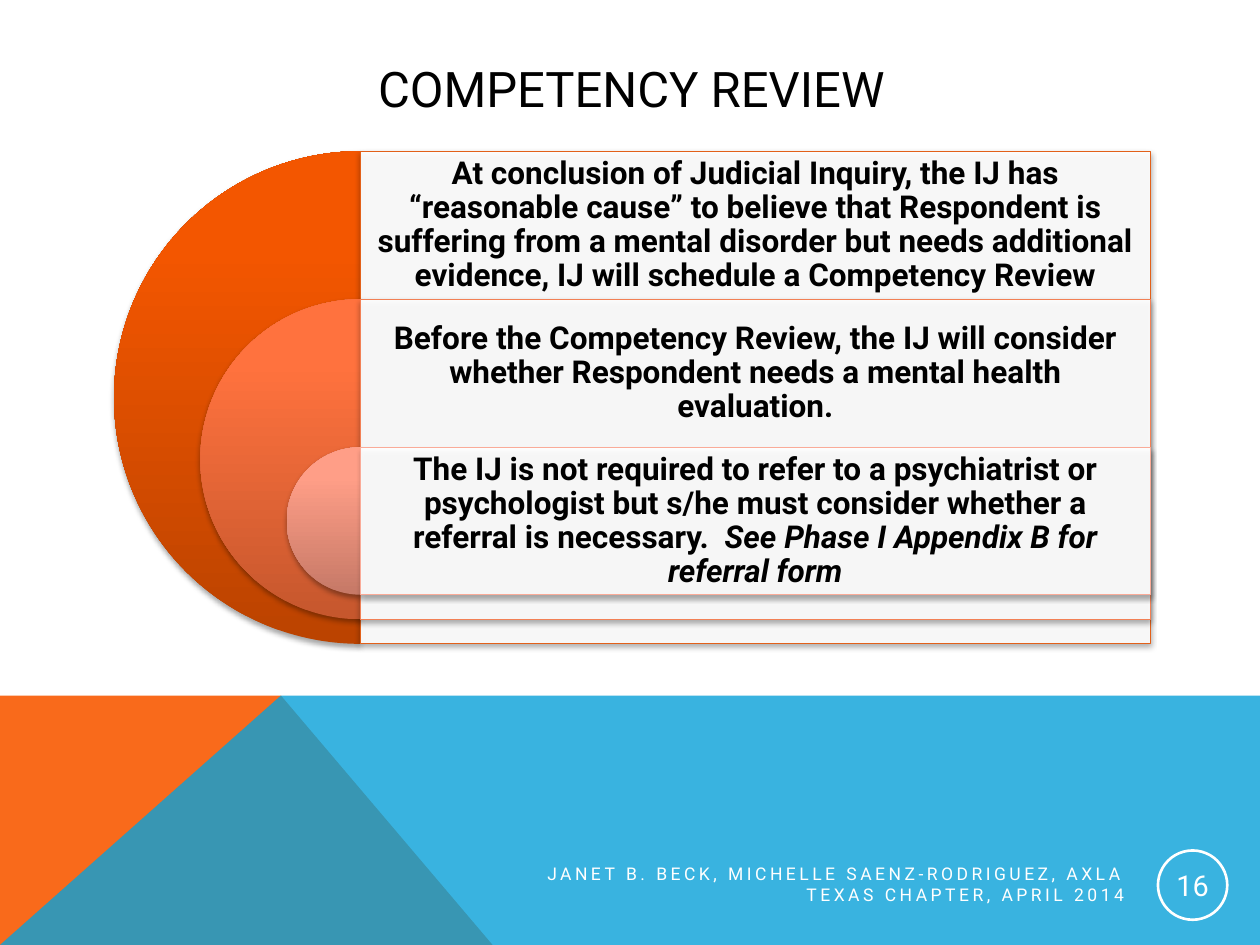
from copy import deepcopy
from dataclasses import dataclass

from lxml import etree
from pptx import Presentation
from pptx.dml.color import RGBColor
from pptx.enum.shapes import MSO_SHAPE
from pptx.enum.text import MSO_ANCHOR, PP_ALIGN
from pptx.oxml.ns import qn
from pptx.util import Inches, Pt

PIE, RECT, OVAL = MSO_SHAPE.PIE, MSO_SHAPE.RECTANGLE, MSO_SHAPE.OVAL
CENTER, RIGHT = PP_ALIGN.CENTER, PP_ALIGN.RIGHT
MIDDLE = MSO_ANCHOR.MIDDLE
COLS, ROWS = 100, 75  # slide grid
CELL = Inches(0.1)


@dataclass(frozen=True)
class Theme:
    font: str = "Roboto"
    ink: str = "000000"
    paper: str = "FFFFFF"
    orange: str = "F96A1B"
    blue: str = "08A1D9"
    title: float = 28
    body: float = 18
    number: float = 16.5
    footer: float = 10


# pie gradient from bottom to top, panel outline, text runs as (text, italic)
STEPS = [
    (("BB4300", "F35600", "F45700"), "E26019",
     [("At conclusion of Judicial Inquiry, the IJ has “reasonable cause” to believe "
       "that Respondent is suffering from a mental disorder but needs additional "
       "evidence, IJ will schedule a Competency Review", False)]),
    (("C6572D", "FF723E", "FF743F"), "F28055",
     [("Before the Competency Review, the IJ will consider whether Respondent needs "
       "a mental health evaluation.", False)]),
    (("C67967", "FF9E87", "FFA089"), "FAAB98",
     [("The IJ is not required to refer to a psychiatrist or psychologist but s/he "
       "must consider whether a referral is necessary.  ", False),
      ("See Phase I Appendix B for referral form", True)]),
]


def cells(*values):
    return [round(v * CELL) for v in values]


class SlideBuilder:
    def __init__(self, prs, theme):
        self.theme = theme
        self.s = prs.slides.add_slide(prs.slide_layouts[5])

    def add_runs(self, tf, runs, size, color, align=CENTER, inset=None, bold=False,
                 line_spacing=None, tracking=None):
        """Fill a text frame with one paragraph of (text, italic) runs."""
        tf.word_wrap = True
        tf.vertical_anchor = MIDDLE
        if inset is not None:
            tf.margin_left = tf.margin_right = Inches(inset)
            tf.margin_top = tf.margin_bottom = Inches(inset)
        p = tf.paragraphs[0]
        p.alignment = align
        if line_spacing:
            p.line_spacing = line_spacing
        for text, italic in runs:
            r = p.add_run()
            r.text = text
            r.font.name = self.theme.font
            r.font.size = Pt(size)
            r.font.bold = bold
            r.font.italic = italic
            r.font.color.rgb = RGBColor.from_string(color)
            if tracking:
                r._r.get_or_add_rPr().set("spc", str(tracking * 100))

    def title(self, box, text):
        sp = self.s.shapes.title
        sp.left, sp.top, sp.width, sp.height = cells(*box)
        self.add_runs(sp.text_frame, [(text, False)], self.theme.title, self.theme.ink)

    def text(self, box, runs, size, color, **style):
        sp = self.s.shapes.add_textbox(*cells(*box))
        self.add_runs(sp.text_frame, runs, size, color, **style)

    def paint(self, sp, fill=None, alpha=None, line=None, width=0.75):
        sp.shadow.inherit = False
        if fill:
            sp.fill.solid()
            sp.fill.fore_color.rgb = RGBColor.from_string(fill)
        else:
            sp.fill.background()
        if alpha:
            clr = sp._element.spPr.find(qn("a:solidFill"))[0]
            etree.SubElement(clr, qn("a:alpha"), val=str(alpha * 1000))
        if line:
            sp.line.color.rgb = RGBColor.from_string(line)
            sp.line.width = Pt(width)
        else:
            sp.line.fill.background()

    def drop_shadow(self, sp):
        effects = sp._element.spPr.find(qn("a:effectLst"))
        shadow = etree.SubElement(effects, qn("a:outerShdw"), blurRad=str(Pt(3.1)),
                                  dist=str(Pt(1.8)), dir="5400000", rotWithShape="0")
        clr = etree.SubElement(shadow, qn("a:srgbClr"), val=self.theme.ink)
        etree.SubElement(clr, qn("a:alpha"), val="35000")

    def polygon(self, points, fill, alpha=None):
        corners = [tuple(cells(*point)) for point in points]
        fb = self.s.shapes.build_freeform(*corners[0])
        fb.add_line_segments(corners[1:], close=True)
        self.paint(fb.convert_to_shape(), fill, alpha)

    def half_disc(self, center_x, top, size, colors):
        sp = self.s.shapes.add_shape(PIE, *cells(center_x - size / 2, top, size, size))
        sp.adjustments[0], sp.adjustments[1] = 54, 162
        self.paint(sp)
        sp.fill.gradient()
        sp.fill.gradient_angle = 90
        stop_list = sp._element.spPr.find(qn("a:gradFill")).find(qn("a:gsLst"))
        stop_list.append(deepcopy(stop_list[0]))
        for stop, position, color in zip(sp.fill.gradient_stops, (0, 0.8, 1), colors):
            stop.position = position
            stop.color.rgb = RGBColor.from_string(color)
        self.drop_shadow(sp)

    def panel(self, box, line):
        sp = self.s.shapes.add_shape(RECT, *cells(*box))
        self.paint(sp, self.theme.paper, 90, line)
        self.drop_shadow(sp)

    def badge(self, box, text):
        sp = self.s.shapes.add_shape(OVAL, *cells(*box))
        self.paint(sp, line=self.theme.paper, width=1.5)
        self.add_runs(sp.text_frame, [(text, False)], self.theme.number,
                      self.theme.paper, inset=0.01)


def main():
    prs = Presentation()
    prs.slide_width, prs.slide_height = cells(COLS, ROWS)
    theme = Theme()
    b = SlideBuilder(prs, theme)

    band_top, peak = 55.2, 22.3
    b.polygon([(0, ROWS), (0, band_top), (peak, band_top), (39.1, ROWS)], theme.orange)
    b.polygon([(0, ROWS), (peak, band_top), (COLS, band_top), (COLS, ROWS)],
              theme.blue, 80)
    b.title((9, 4, 82.2, 6), "COMPETENCY REVIEW")

    left, top, width, step = 28.6, 12, 62.7, 11.75
    for i, (colors, line, runs) in enumerate(STEPS):
        y = top + i * step
        size = 39.1 - i * 13.7
        b.half_disc(left, y, size, colors)
        b.panel((left, y, width, size), line)
        b.text((left, y, width, step), runs, theme.body, theme.ink,
               inset=0.07, bold=True, line_spacing=0.9)

    b.badge((91.9, 67.5, 5.5, 5.5), "16")
    credit = "JANET B. BECK, MICHELLE SAENZ-RODRIGUEZ, AXLA TEXAS CHAPTER, APRIL 2014"
    b.text((38.5, 68.7, 51.7, 3), [(credit, False)], theme.footer, theme.paper,
           align=RIGHT, tracking=2)
    prs.save("out.pptx")


if __name__ == "__main__":
    main()
